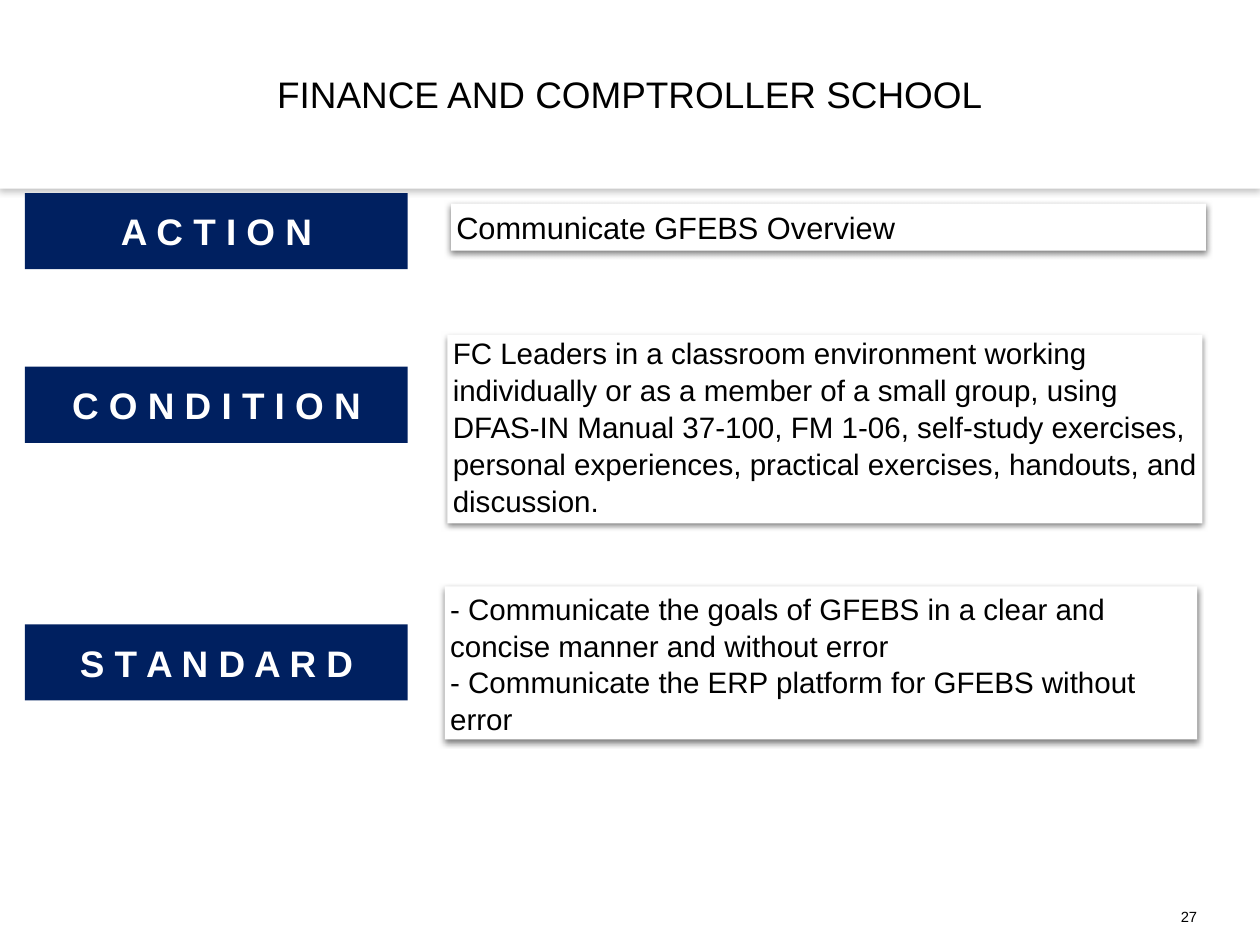
from pptx import Presentation
from pptx import util as u
from pptx.dml.color import RGBColor
from pptx.enum import shapes, text
from pptx.oxml import parse_xml
from pptx.oxml.ns import nsdecls

PX = 9144  # 100 px to the inch
WIDE, HIGH = 1422, 1067
BLACK = RGBColor(0x00, 0x00, 0x00)
WHITE = RGBColor(0xFF, 0xFF, 0xFF)
NAVY = RGBColor(0x00, 0x20, 0x60)
LEFT, CENTER, RIGHT = (text.PP_ALIGN.LEFT, text.PP_ALIGN.CENTER,
                       text.PP_ALIGN.RIGHT)
MIDDLE, BOTTOM = text.MSO_ANCHOR.MIDDLE, text.MSO_ANCHOR.BOTTOM

# label, bar top, card box measured from the bar's corner, size, anchor, lines
ROWS = [
    ("A C T I O N", 218, (481, 12, 852, 53), 25, BOTTOM,
     ["Communicate GFEBS Overview"]),
    ("C O N D I T I O N", 414, (477, -36, 852, 213), 24, BOTTOM,
     ["FC Leaders in a classroom environment working individually or as a "
      "member of a small group, using DFAS-IN Manual 37-100, FM 1-06, "
      "self-study exercises, personal experiences, practical exercises, "
      "handouts, and discussion."]),
    ("S T A N D A R D", 705, (474, -43, 849, 173), 24, MIDDLE,
     ["- Communicate the goals of GFEBS in a clear and concise manner and "
      "without error",
      "- Communicate the ERP platform for GFEBS without error"]),
]


def place(shape, box):
    shape.left, shape.top, shape.width, shape.height = [n * PX for n in box]


def paint(shape, color, shade=0):
    """Flat fill without outline; shade is the shadow's opacity in percent."""
    shape.fill.solid()
    shape.fill.fore_color.rgb = color
    shape.line.fill.background()
    shape.shadow.inherit = False
    if shade:
        effects = shape.element.spPr.find(
            "{http://schemas.openxmlformats.org/drawingml/2006/main}effectLst")
        effects.append(parse_xml(
            f'<a:outerShdw {nsdecls("a")} blurRad="{u.Pt(5)}" '
            f'dist="{u.Pt(2)}" dir="5400000" rotWithShape="0">'
            f'<a:srgbClr val="000000"><a:alpha val="{shade * 1000}"/>'
            '</a:srgbClr></a:outerShdw>'))


def block(slide, box, color, shade=0):
    rect = slide.shapes.add_shape(shapes.MSO_SHAPE.RECTANGLE,
                                  *[n * PX for n in box])
    paint(rect, color, shade)
    return rect


def write(shape, lines, size, color=BLACK, bold=False, align=LEFT,
          anchor=MIDDLE, pitch=1.0):
    frame = shape.text_frame
    frame.text = "\n".join(lines)
    frame.word_wrap = True
    frame.auto_size = text.MSO_AUTO_SIZE.NONE
    frame.vertical_anchor = anchor
    frame.margin_left = frame.margin_top = frame.margin_bottom = 6 * PX
    frame.margin_right = 5 * PX
    for para in frame.paragraphs:
        props = para._p.get_or_add_pPr()
        props.set("marL", "0")
        props.set("indent", "0")
        props.append(parse_xml(f'<a:buNone {nsdecls("a")}/>'))
        para.alignment = align
        para.space_before = u.Pt(0)
        para.line_spacing = pitch
        para.font.name = "Arial"
        para.font.size = u.Pt(size)
        para.font.bold = bold
        para.font.color.rgb = color


def header(slide, box):
    left, top, wide, high = box
    title = slide.shapes.title
    band = block(slide, box, WHITE, 23)
    title.element.addprevious(band.element)
    place(title, (left + 302, top + 75, 817, 62))
    write(title, ["FINANCE AND COMPTROLLER SCHOOL"], 30, align=CENTER)


def row(slide, box, label, card, size, anchor, lines, body=None):
    left, top, wide, high = box
    bar = block(slide, box, NAVY)
    write(bar, [label], 30, WHITE, True, CENTER)
    dx, dy, *span = card
    spot = (left + dx, top + dy, *span)
    if body is None:
        body = block(slide, spot, WHITE, 50)
    else:
        place(body, spot)
        paint(body, WHITE, 50)
    write(body, lines, size, anchor=anchor, pitch=1.04)


def footer(slide, box):
    number = slide.shapes.add_textbox(*[n * PX for n in box])
    write(number, ["27"], 12, align=RIGHT)
    number.text_frame.margin_right = 10 * PX


def main():
    deck = Presentation()
    deck.slide_width, deck.slide_height = WIDE * PX, HIGH * PX
    slide = deck.slides.add_slide(deck.slide_layouts[1])
    header(slide, (0, 0, WIDE, 213))
    for label, top, card, size, anchor, lines in ROWS:
        # The list of standards fills the body placeholder
        body = slide.placeholders[1] if len(lines) > 1 else None
        row(slide, (28, top, 432, 86), label, card, size, anchor, lines, body)
    footer(slide, (1057, 1015, 304, 40))
    deck.save("out.pptx")


if __name__ == "__main__":
    main()
